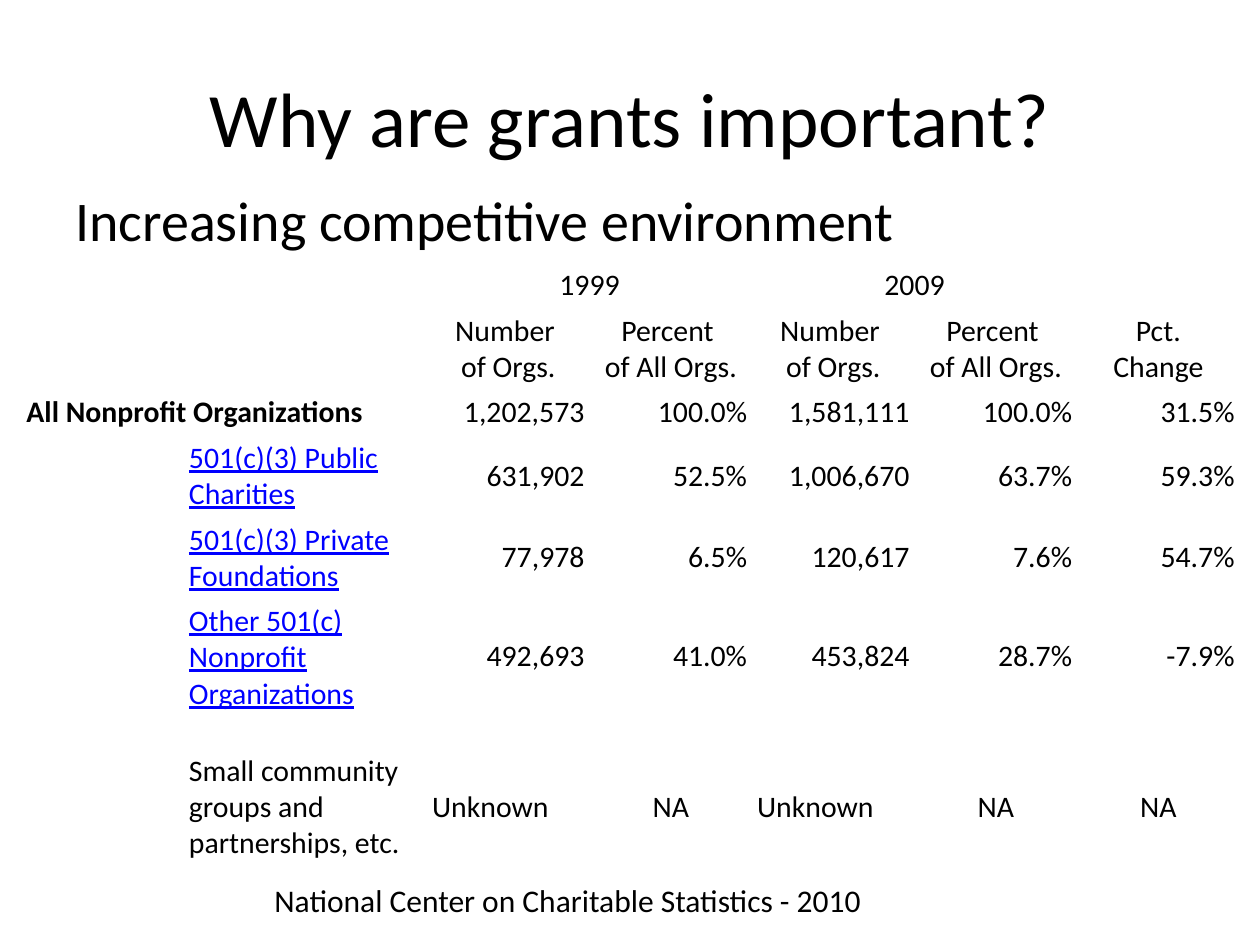
"""Build a slide with a table of nonprofit organizations in 1999 and 2009."""
import lxml.etree
import pptx
import pptx.dml.color
import pptx.enum.text
import pptx.oxml.ns
import pptx.util

Inches = pptx.util.Inches
Pt = pptx.util.Pt
ALIGN = pptx.enum.text.PP_ALIGN
ANCHOR = pptx.enum.text.MSO_ANCHOR
BLACK, BLUE = "000000", "0000FF"
TABLE_SIZE = 17
COLUMN_WIDTHS = [1.29, 1.93] + [1.29] * 5
ROW_HEIGHTS = [0.35, 0.63, 0.35, 0.63, 0.63, 0.9, 1.46]
NUMBER, PERCENT = "Number \nof Orgs.", "Percent \nof All Orgs."
ROWS = [
    ["", "", "1999", "", "2009", "", ""],
    ["", "", NUMBER, PERCENT, NUMBER, PERCENT, "Pct.\nChange"],
    ["All Nonprofit Organizations", "", "1,202,573", "100.0%", "1,581,111", "100.0%", "31.5%"],
    ["", "501(c)(3) Public Charities", "631,902", "52.5%", "1,006,670", "63.7%", "59.3%"],
    ["", "501(c)(3) Private Foundations", "77,978", "6.5%", "120,617", "7.6%", "54.7%"],
    ["", "Other 501(c) Nonprofit Organizations", "492,693", "41.0%", "453,824", "28.7%", "-7.9%"],
    ["", "Small community groups and partnerships, etc.", "Unknown", "NA", "Unknown", "NA", "NA"],
]
MERGES = [(0, 0), (0, 2), (0, 4), (1, 0), (2, 0)]
HEADER_ROWS = (0, 1)
LINK_ROWS = (3, 4, 5)


def color(value):
    """Return the colour for a hex string."""
    return pptx.dml.color.RGBColor.from_string(value)


def apply(target, values):
    """Set each attribute in a dict of format values."""
    for name, value in values.items():
        setattr(target, name, value)


def write(para, text, size, align=ALIGN.LEFT, shade=BLACK, **font):
    """Fill a paragraph with text in one format."""
    para.text = text
    para.alignment = align
    for span in para.runs:
        apply(span.font, {"name": "Calibri", "size": Pt(size), **font})
        span.font.color.rgb = color(shade)
    qn = pptx.oxml.ns.qn
    for line_break in para._p.findall(qn("a:br")):
        lxml.etree.SubElement(line_break, qn("a:rPr")).set("sz", str(size * 100))
    para._p.get_or_add_endParaRPr().set("sz", str(size * 100))


def add_title(page, text):
    """Place and fill the title placeholder."""
    title = page.shapes.title
    apply(title, {"left": Inches(0.5), "top": Inches(0.3),
                  "width": Inches(9), "height": Inches(1.25)})
    title.text_frame.vertical_anchor = ANCHOR.MIDDLE
    write(title.text_frame.paragraphs[0], text, 44, ALIGN.CENTER)


def add_text(page, place, text, size, **frame):
    """Add a wrapped text box and return its paragraph."""
    box = page.shapes.add_textbox(*map(Inches, place))
    apply(box.text_frame, {"word_wrap": True, **frame})
    para = box.text_frame.paragraphs[0]
    write(para, text, size)
    return para


def cell_format(row, column, text):
    """Return the text format that a table position calls for."""
    if row in HEADER_ROWS or text == "NA":
        return {"align": ALIGN.CENTER}
    if column < 2:
        if row in LINK_ROWS:
            return {"shade": BLUE, "underline": True}
        return {"bold": row == 2}
    return {"align": ALIGN.LEFT if text == "Unknown" else ALIGN.RIGHT}


def add_table(page):
    """Add the table of organizations by year."""
    frame = page.shapes.add_table(len(ROWS), len(COLUMN_WIDTHS), Inches(0.17), Inches(2.08),
                                  Inches(9.67), Inches(5.03))
    table = frame.table
    apply(table, {"first_row": False, "horz_banding": False})
    for column, width in zip(table.columns, COLUMN_WIDTHS):
        column.width = Inches(width)
    for row, height in zip(table.rows, ROW_HEIGHTS):
        row.height = Inches(height)
    sides = ("left", "right", "top", "bottom")
    margins = {f"margin_{side}": Inches(0.04) for side in sides}
    for row, texts in enumerate(ROWS):
        for column, text in enumerate(texts):
            cell = table.cell(row, column)
            apply(cell, {"vertical_anchor": ANCHOR.MIDDLE, **margins})
            cell.fill.background()
            write(cell.text_frame.paragraphs[0], text, TABLE_SIZE,
                  **cell_format(row, column, text))
    for row, column in MERGES:
        table.cell(row, column).merge(table.cell(row, column + 1))


def main():
    """Build the slide and save the deck."""
    deck = pptx.Presentation()
    apply(deck, {"slide_width": Inches(10), "slide_height": Inches(7.5)})
    page = deck.slides.add_slide(deck.slide_layouts[5])
    add_title(page, "Why are grants important?")
    para = add_text(page, (0.5, 1.42, 9, 5.5), "Increasing competitive environment", 32)
    para.space_before = Pt(6.4)
    add_table(page)
    add_text(page, (2.08, 6.94, 5.83, 0.4), "National Center on Charitable Statistics - 2010", 18,
             auto_size=pptx.enum.text.MSO_AUTO_SIZE.SHAPE_TO_FIT_TEXT)
    deck.save("out.pptx")


if __name__ == "__main__":
    main()
